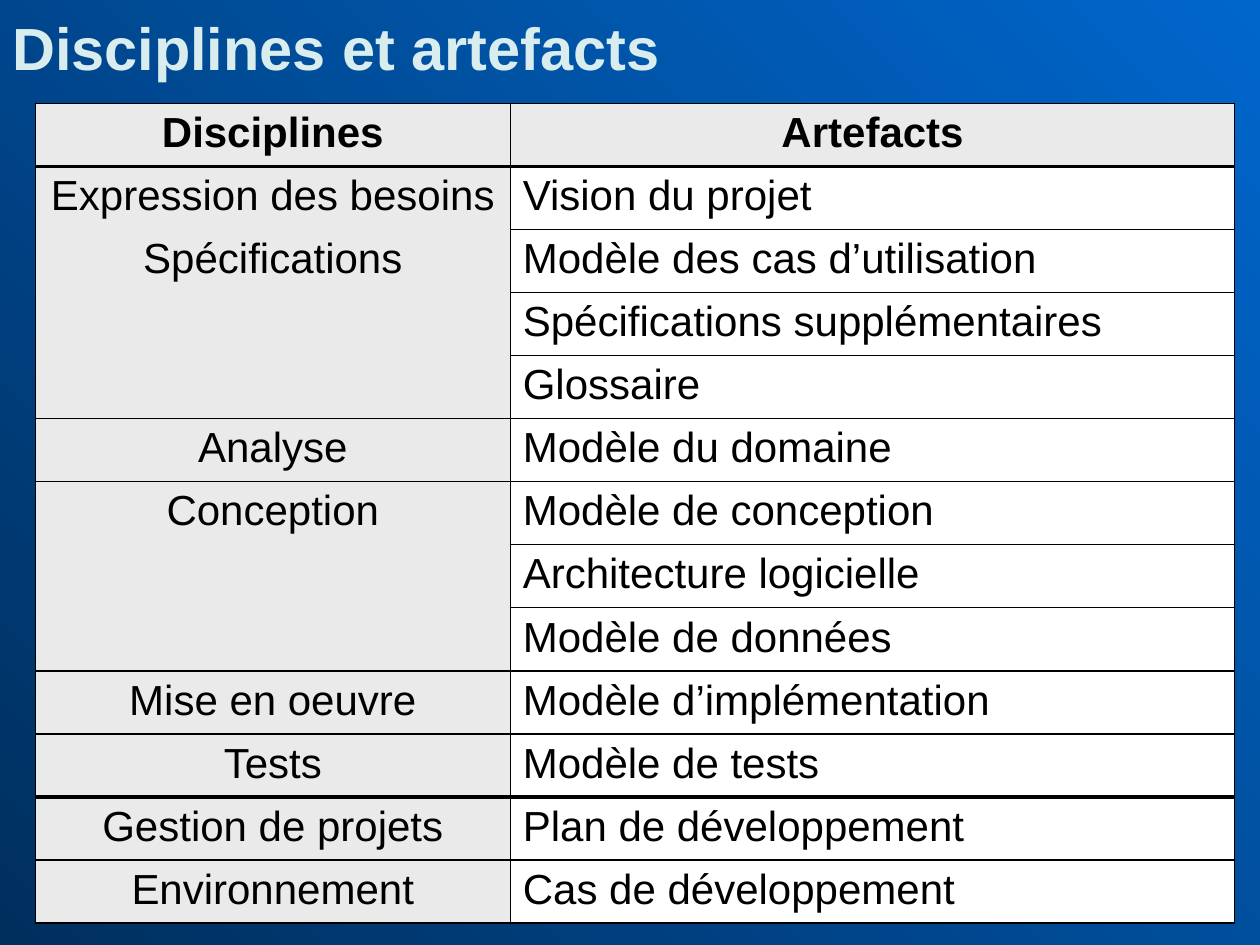
from lxml.etree import SubElement
from pptx import Presentation
from pptx.dml.color import RGBColor
from pptx.enum.text import MSO_ANCHOR, PP_ALIGN
from pptx.oxml.ns import qn
from pptx.util import Inches, Pt

COLORS = {
    "dark_blue": "002F5E",
    "light_blue": "0066CC",
    "title": "D9EDEF",
    "text": "000000",
    "border": "000000",
    "discipline": "EAEAEA",
    "artefact": "FFFFFF",
}
FONT = "Arial"
THIN, THICK = 1, 2.25
HEADER = ("Disciplines", "Artefacts")
# Each group lists (discipline, artefact) rows that share one discipline block.
GROUPS = [
    [
        ("Expression des besoins", "Vision du projet"),
        ("Spécifications", "Modèle des cas d’utilisation"),
        ("", "Spécifications supplémentaires"),
        ("", "Glossaire"),
    ],
    [("Analyse", "Modèle du domaine")],
    [
        ("Conception", "Modèle de conception"),
        ("", "Architecture logicielle"),
        ("", "Modèle de données"),
    ],
    [("Mise en oeuvre", "Modèle d’implémentation")],
    [("Tests", "Modèle de tests")],
    [("Gestion de projets", "Plan de développement")],
    [("Environnement", "Cas de développement")],
]
THICK_BELOW = {"Disciplines", "Tests"}


def rgb(name):
    return RGBColor.from_string(COLORS[name])


def paint_background(slide):
    fill = slide.background.fill
    fill.gradient()
    fill.gradient_angle = 45
    for stop, name in zip(fill.gradient_stops, ("dark_blue", "light_blue")):
        stop.color.rgb = rgb(name)


def add_run(paragraph, text, size, color, bold=False):
    run = paragraph.add_run()
    run.text = text
    run.font.name = FONT
    run.font.size = Pt(size)
    run.font.bold = bold
    run.font.color.rgb = rgb(color)


def add_title(slide, text):
    box = slide.shapes.add_textbox(0, 0, Inches(9.64), Inches(0.67))
    frame = box.text_frame
    frame.word_wrap = True
    frame.margin_top = Inches(0.09)
    frame.margin_bottom = 0
    add_run(frame.paragraphs[0], text, 34, "title", bold=True)


def set_borders(cell, top, bottom):
    """Draw thin sides, and top and bottom lines of the given widths (0 for none)."""
    properties = cell._tc.get_or_add_tcPr()
    widths = {"a:lnL": THIN, "a:lnR": THIN, "a:lnT": top, "a:lnB": bottom}
    for position, (tag, width) in enumerate(widths.items()):
        line = SubElement(properties, qn(tag), w=str(Pt(width)))
        properties.insert(position, line)
        if width:
            solid = SubElement(line, qn("a:solidFill"))
            SubElement(solid, qn("a:srgbClr"), val=COLORS["border"])
        else:
            SubElement(line, qn("a:noFill"))


def fill_cell(cell, text, background, centered, bold, top, bottom):
    cell.fill.solid()
    cell.fill.fore_color.rgb = rgb(background)
    cell.vertical_anchor = MSO_ANCHOR.TOP
    set_borders(cell, top, bottom)
    if text:
        paragraph = cell.text_frame.paragraphs[0]
        paragraph.alignment = PP_ALIGN.CENTER if centered else PP_ALIGN.LEFT
        add_run(paragraph, text, 24, "text", bold)


def add_artefact_table(slide):
    groups = [[HEADER]] + GROUPS
    row_count = sum(len(group) for group in groups)
    table = slide.shapes.add_table(
        row_count, 2, Inches(0.28), Inches(0.82), Inches(9.52), Inches(0.5 * row_count)
    ).table
    table.first_row = False
    table.horz_banding = False
    table.columns[0].width = Inches(3.77)
    table.columns[1].width = Inches(5.75)

    rows = iter(table.rows)
    above = THIN
    for group in groups:
        below = THICK if group[0][0] in THICK_BELOW else THIN
        is_header = group[0] == HEADER
        last = len(group) - 1
        for index, (discipline, artefact) in enumerate(group):
            left, right = next(rows).cells
            top = above if index == 0 else 0
            bottom = below if index == last else 0
            fill_cell(left, discipline, "discipline", True, is_header, top, bottom)
            fill_cell(right, artefact, "discipline" if is_header else "artefact",
                      is_header, is_header, top or THIN, bottom or THIN)
        above = below


def main():
    presentation = Presentation()
    presentation.slide_width = Inches(10)
    presentation.slide_height = Inches(7.5)
    slide = presentation.slides.add_slide(presentation.slide_layouts[6])
    paint_background(slide)
    add_title(slide, "Disciplines et artefacts")
    add_artefact_table(slide)
    presentation.save("out.pptx")


if __name__ == "__main__":
    main()
